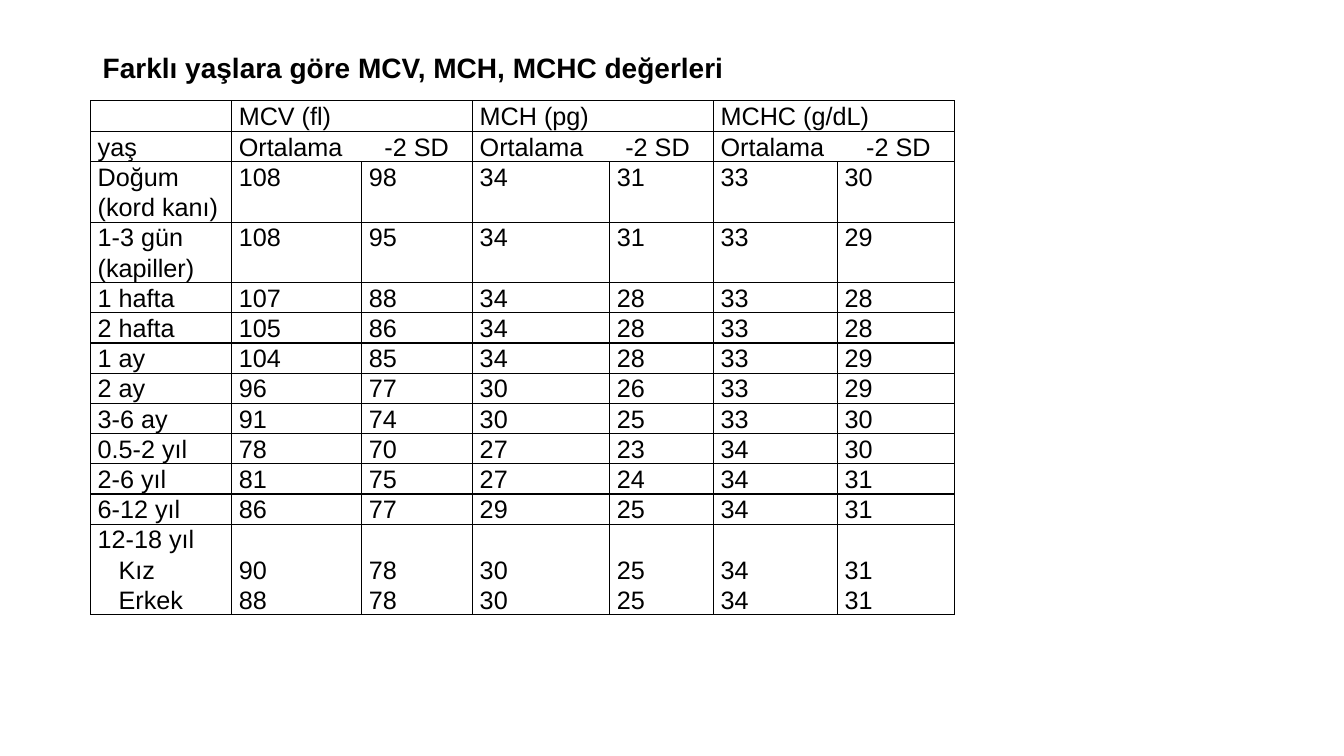
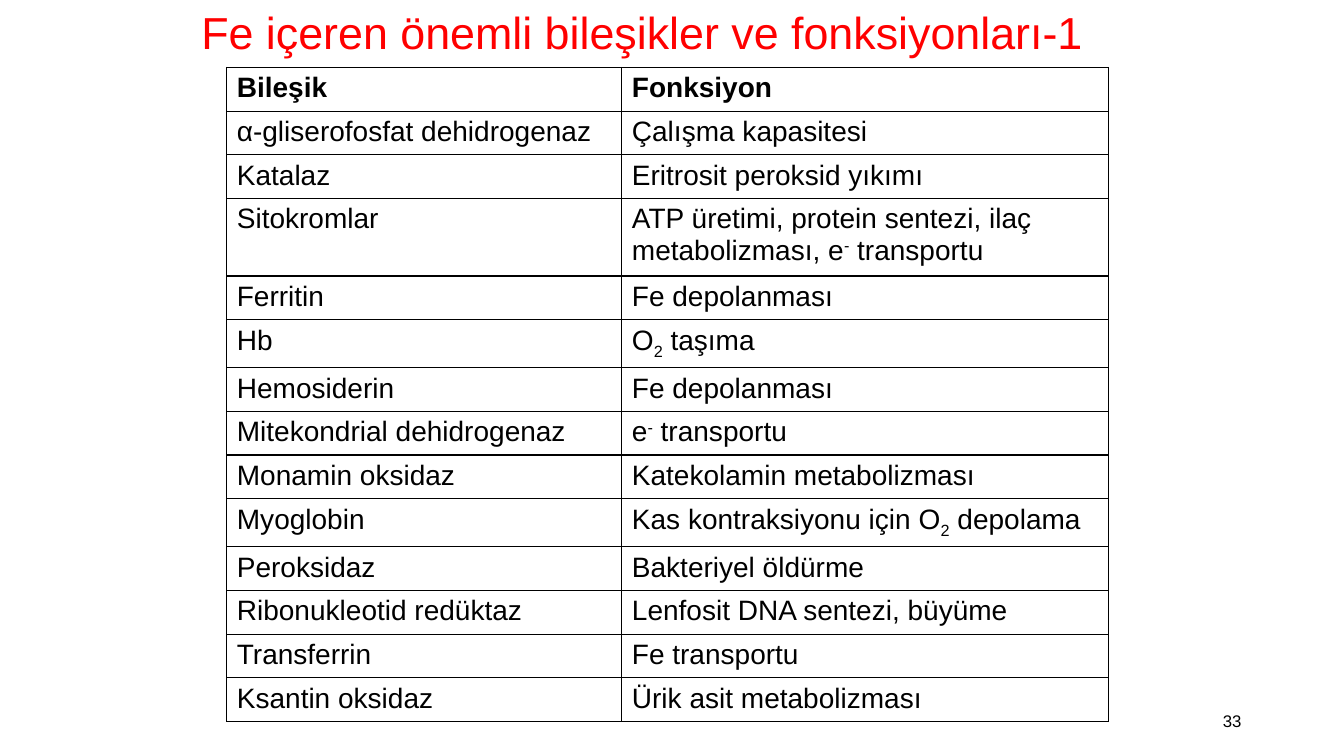
from lxml.etree import SubElement
from pptx import Presentation
from pptx.dml.color import RGBColor
from pptx.enum.text import MSO_ANCHOR as ANCHOR, MSO_AUTO_SIZE as FIT, PP_ALIGN as ALIGN
from pptx.oxml.ns import qn
from pptx.util import Pt

BLACK = RGBColor(0x00, 0x00, 0x00)
RED = RGBColor(0xFF, 0x00, 0x00)
FONT = "Arial"
LINE_SPACING = 1.07
LINE_HEIGHT = 21.5
SD_TAB = 104
ROW_HEIGHT = 31.2
SUBSCRIPT_HEIGHT = 34.4
TWO_LINE_HEIGHT = 55.4

AGE_TITLE = "Farklı yaşlara göre MCV, MCH, MCHC değerleri"
AGE_COLS = [100.8, 92.9, 79.2, 97.9, 74.2, 88.6, 83.5]
INDICES = ["MCV (fl)", "MCH (pg)", "MCHC (g/dL)"]
AGE_ROWS = [
    ("Doğum (kord kanı)", 108, 98, 34, 31, 33, 30),
    ("1-3 gün (kapiller)", 108, 95, 34, 31, 33, 29),
    ("1 hafta", 107, 88, 34, 28, 33, 28),
    ("2 hafta", 105, 86, 34, 28, 33, 28),
    ("1 ay", 104, 85, 34, 28, 33, 29),
    ("2 ay", 96, 77, 30, 26, 33, 29),
    ("3-6 ay", 91, 74, 30, 25, 33, 30),
    ("0.5-2 yıl", 78, 70, 27, 23, 34, 30),
    ("2-6 yıl", 81, 75, 27, 24, 34, 31),
    ("6-12 yıl", 86, 77, 29, 25, 34, 31),
]
TEEN_AGE = "12-18 yıl"
TEEN_ROWS = [
    ("Kız", 90, 78, 30, 25, 34, 31),
    ("Erkek", 88, 78, 30, 25, 34, 31),
]

IRON_TITLE = "Fe içeren önemli bileşikler ve fonksiyonları-1"
IRON_COLS = [282.2, 347.8]
SUB_2 = ("2", -25000)
SUPER_MINUS = ("-", 30000)
IRON_ROWS = [
    ("Bileşik", ["Fonksiyon"]),
    ("α-gliserofosfat dehidrogenaz", ["Çalışma kapasitesi"]),
    ("Katalaz", ["Eritrosit peroksid yıkımı"]),
    ("Sitokromlar", ["ATP üretimi, protein sentezi, ilaç metabolizması, e",
                     SUPER_MINUS, " transportu"]),
    ("Ferritin", ["Fe depolanması"]),
    ("Hb", ["O", SUB_2, " taşıma"]),
    ("Hemosiderin", ["Fe depolanması"]),
    ("Mitekondrial dehidrogenaz", ["e", SUPER_MINUS, " transportu"]),
    ("Monamin oksidaz", ["Katekolamin metabolizması"]),
    ("Myoglobin", ["Kas kontraksiyonu için O", SUB_2, " depolama"]),
    ("Peroksidaz", ["Bakteriyel öldürme"]),
    ("Ribonukleotid redüktaz", ["Lenfosit DNA sentezi, büyüme"]),
    ("Transferrin", ["Fe transportu"]),
    ("Ksantin oksidaz", ["Ürik asit metabolizması"]),
]
PAGE_NUMBER = "33"


def add_text(tf, parts, size=18, color=BLACK, bold=False, align=ALIGN.LEFT,
             spacing=None, indent=0, tab=None, new=False):
    p = tf.add_paragraph() if new else tf.paragraphs[0]
    p.alignment = align
    if spacing:
        p.line_spacing = spacing
    ppr = p._p.get_or_add_pPr()
    if indent:
        ppr.set("marL", str(Pt(indent)))
    if tab:
        tabs = SubElement(ppr, qn("a:tabLst"))
        SubElement(tabs, qn("a:tab"), pos=str(Pt(tab)), algn="l")
    for part in [parts] if isinstance(parts, str) else parts:
        text, baseline = (part, 0) if isinstance(part, str) else part
        r = p.add_run()
        r.text = text
        f = r.font
        f.name, f.size, f.bold = FONT, Pt(size), bold
        f.color.rgb = color
        if baseline:
            r._r.get_or_add_rPr().set("baseline", str(baseline))


def set_frame(sp, left, top, width, height, anchor):
    sp.left, sp.top, sp.width, sp.height = map(Pt, (left, top, width, height))
    tf = sp.text_frame
    tf.word_wrap = True
    tf.auto_size = FIT.NONE
    tf.vertical_anchor = anchor
    tf.margin_left = tf.margin_right = Pt(7.2)
    tf.margin_top = tf.margin_bottom = Pt(3.6)
    return tf


def add_slide(prs, title, box, anchor, **style):
    s = prs.slides.add_slide(prs.slide_layouts[5])
    add_text(set_frame(s.shapes.title, *box, anchor), title, **style)
    return s


def add_grid(s, left, top, cols, heights, margin_x, margin_y):
    table = s.shapes.add_table(len(heights), len(cols), Pt(left), Pt(top),
                               Pt(sum(cols)), Pt(sum(heights))).table
    table.first_row = table.horz_banding = False
    for col, width in zip(table.columns, cols):
        col.width = Pt(width)
    for row, height in zip(table.rows, heights):
        row.height = Pt(height)
    for cell in table.iter_cells():
        cell.margin_left = cell.margin_right = Pt(margin_x)
        cell.margin_top = cell.margin_bottom = Pt(margin_y)
        tcpr = cell._tc.get_or_add_tcPr()
        for side in ("a:lnL", "a:lnR", "a:lnT", "a:lnB"):
            ln = SubElement(tcpr, qn(side), w=str(Pt(1)))
            fill = SubElement(ln, qn("a:solidFill"))
            SubElement(fill, qn("a:srgbClr"), val=str(BLACK))
        cell.fill.background()
    return table


def build_age_slide(prs):
    s = add_slide(prs, AGE_TITLE, (66.2, 32.4, 825, 31.7), ANCHOR.MIDDLE,
                  size=20, bold=True)
    lines = [1, 1] + [2 if "(" in row[0] else 1 for row in AGE_ROWS] + [3]
    table = add_grid(s, 64.8, 72, AGE_COLS, [n * LINE_HEIGHT for n in lines], 5, 0)

    def write(row, col, text, **style):
        add_text(table.cell(row, col).text_frame, text, spacing=LINE_SPACING, **style)

    write(1, 0, "yaş")
    for i, name in enumerate(INDICES):
        col = 1 + 2 * i
        for row, text in enumerate((name, "Ortalama\t-2 SD")):
            table.cell(row, col).merge(table.cell(row, col + 1))
            write(row, col, text, tab=SD_TAB if row else None)
    for r, values in enumerate(AGE_ROWS, 2):
        for c, value in enumerate(values):
            write(r, c, str(value))
    last = len(lines) - 1
    write(last, 0, TEEN_AGE)
    for i, values in enumerate(TEEN_ROWS):
        for c, value in enumerate(values):
            table.cell(last, c).vertical_anchor = ANCHOR.BOTTOM if c else ANCHOR.TOP
            write(last, c, str(value), indent=0 if c else 15, new=i > 0 or c == 0)


def iron_height(parts):
    if SUB_2 in parts:
        return SUBSCRIPT_HEIGHT
    return TWO_LINE_HEIGHT if len(parts[0]) > 40 else ROW_HEIGHT


def build_iron_slide(prs):
    s = add_slide(prs, IRON_TITLE, (120, 0, 678, 45.4), ANCHOR.TOP,
                  size=32, color=RED, align=ALIGN.CENTER)
    heights = [iron_height(parts) for _, parts in IRON_ROWS]
    table = add_grid(s, 162, 48.2, IRON_COLS, heights, 7.2, 3.6)
    for r, row in enumerate(IRON_ROWS):
        for c, parts in enumerate(row):
            add_text(table.cell(r, c).text_frame, parts, size=20, bold=r == 0)
    number = s.shapes.add_textbox(0, 0, 0, 0)
    add_text(set_frame(number, 678, 500.4, 216, 28.8, ANCHOR.MIDDLE), PAGE_NUMBER,
             size=12, align=ALIGN.RIGHT)


def main():
    prs = Presentation()
    prs.slide_width, prs.slide_height = Pt(960), Pt(540)
    build_age_slide(prs)
    build_iron_slide(prs)
    prs.save("out.pptx")


if __name__ == "__main__":
    main()
